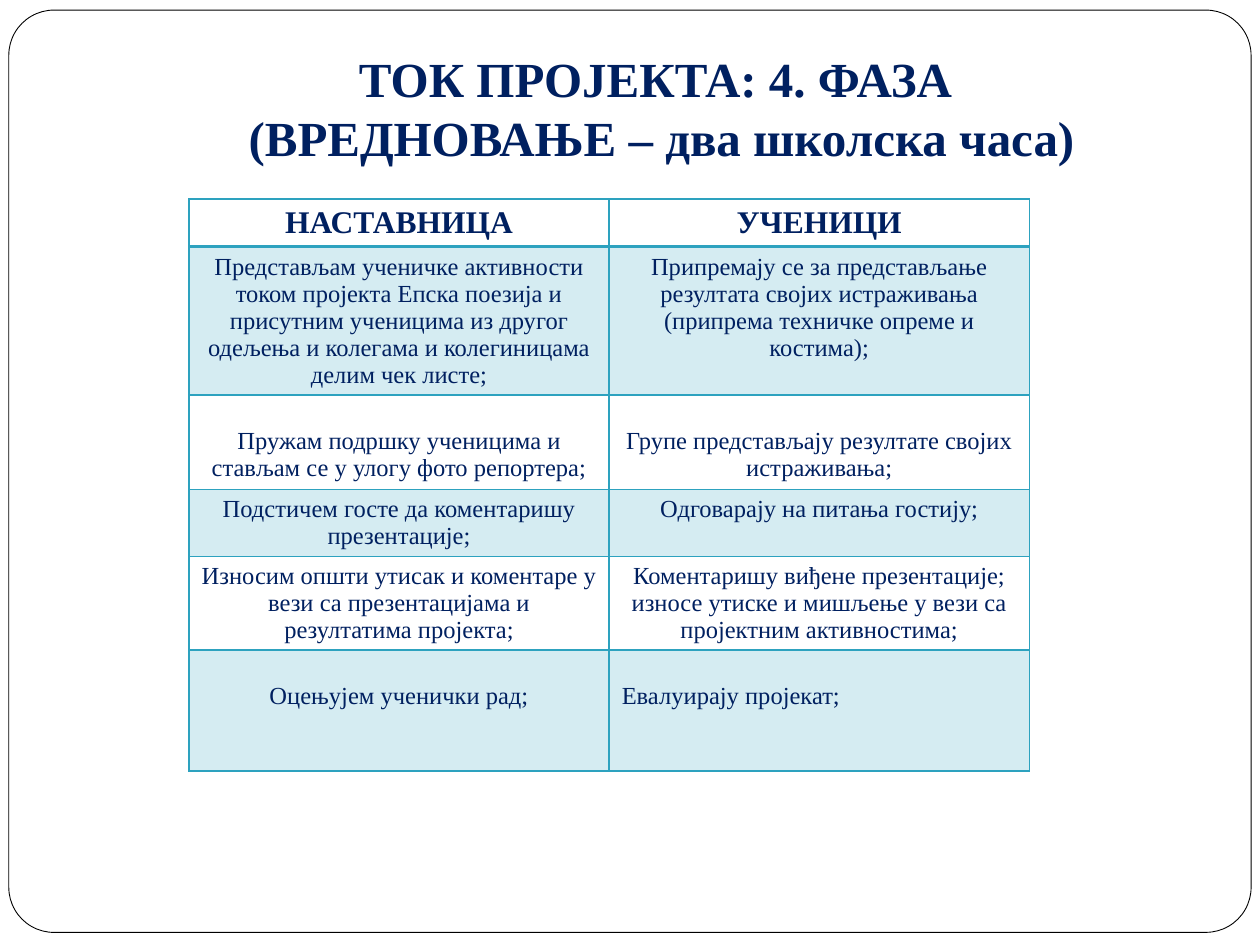
from lxml.etree import SubElement
from pptx import Presentation
from pptx.dml.color import RGBColor
from pptx.enum.shapes import MSO_SHAPE
from pptx.enum.text import MSO_ANCHOR, MSO_AUTO_SIZE, PP_ALIGN
from pptx.oxml.ns import qn
from pptx.util import Inches, Pt

NAVY, TEAL, WHITE, BLACK = "002060", "2DA2BF", "FFFFFF", "000000"
TITLE = "ТОК ПРОЈЕКТА: 4. ФАЗА \v(ВРЕДНОВАЊЕ – два школска часа)"
PHASE_ROWS = [
    ("НАСТАВНИЦА", "УЧЕНИЦИ"),
    ("Представљам ученичке активности током пројекта Епска поезија и присутним "
     "ученицима из другог одељења и колегама и колегиницама делим чек листе;",
     "Припремају се за представљање резултата својих истраживања "
     "(припрема техничке опреме и костима);"),
    ("Пружам подршку ученицима и стављам се у улогу фото репортера;",
     "Групе представљају резултате својих истраживања;"),
    ("Подстичем госте да коментаришу презентације;",
     "Одговарају на питања гостију;"),
    ("Износим општи утисак и коментаре у вези са презентацијама и резултатима пројекта;",
     "Коментаришу виђене презентације; износе утиске и мишљење у вези са "
     "пројектним активностима;"),
    ("Оцењујем ученички рад;", "Евалуирају пројекат;"),
]
ROW_HEIGHTS = [0.38, 1.17, 0.75, 0.53, 0.74, 0.96]
LOWERED_ROWS = (2, 5)
LEFT_ALIGNED = (5, 1)


def color(code):
    return RGBColor.from_string(code)


def write(frame, text, size=14, bold=False, align=PP_ALIGN.CENTER):
    frame.text = text
    paragraph = frame.paragraphs[0]
    paragraph.alignment = align
    for run in paragraph.runs:
        run.font.name = "Times New Roman"
        run.font.size = Pt(size)
        run.font.bold = bold
        run.font.color.rgb = color(NAVY)


def tint(cell, code, percent):
    cell.fill.solid()
    cell.fill.fore_color.rgb = color(code)
    shade = cell.fill._xPr.find(qn("a:solidFill"))[0]
    SubElement(shade, qn("a:alpha"), val=str(percent * 1000))


def add_borders(cell, code, widths):
    properties = cell._tc.get_or_add_tcPr()
    for position, (side, width) in enumerate(widths.items()):
        border = properties.makeelement(qn(f"a:ln{side}"), {"w": str(Pt(width))})
        solid = SubElement(border, qn("a:solidFill"))
        SubElement(solid, qn("a:srgbClr"), val=code)
        properties.insert(position, border)


def add_frame(slide):
    frame = slide.shapes.add_shape(
        MSO_SHAPE.ROUNDED_RECTANGLE, Inches(0.07), Inches(0.08), Inches(9.86), Inches(7.32))
    frame.adjustments[0] = 0.049
    frame.shadow.inherit = False
    frame.fill.solid()
    frame.fill.fore_color.rgb = color(WHITE)
    frame.line.color.rgb = color(BLACK)
    frame.line.width = Pt(0.5)
    slide.shapes._spTree.insert(2, frame._element)


def format_title(title):
    title.left, title.top = Inches(1), Inches(0.17)
    title.width, title.height = Inches(8.5), Inches(1.25)
    write(title.text_frame, TITLE, size=28, bold=True)
    title.text_frame.auto_size = MSO_AUTO_SIZE.NONE
    title.text_frame.vertical_anchor = MSO_ANCHOR.BOTTOM
    title.text_frame.margin_bottom = Inches(0.1)


def add_phase_table(slide):
    table = slide.shapes.add_table(
        len(PHASE_ROWS), 2, Inches(1.5), Inches(1.58),
        Inches(6.67), Inches(sum(ROW_HEIGHTS))).table
    table.first_row = table.horz_banding = False
    for row, (activities, height) in enumerate(zip(PHASE_ROWS, ROW_HEIGHTS)):
        table.rows[row].height = Inches(height)
        header = row == 0
        for column, activity in enumerate(activities):
            cell = table.cell(row, column)
            align = PP_ALIGN.LEFT if (row, column) == LEFT_ALIGNED else PP_ALIGN.CENTER
            write(cell.text_frame, activity, size=18 if header else 14,
                  bold=header, align=align)
            if row in LOWERED_ROWS:
                cell.margin_top = Inches(0.26)
            if row % 2:
                tint(cell, TEAL, 20)
            else:
                cell.fill.background()
            add_borders(cell, TEAL, {"L": 1, "R": 1, "T": 2 if row == 1 else 1,
                                     "B": 2 if header else 1})


def main():
    presentation = Presentation()
    presentation.slide_width, presentation.slide_height = Inches(10), Inches(7.5)
    slide = presentation.slides.add_slide(presentation.slide_layouts[5])
    add_frame(slide)
    format_title(slide.shapes.title)
    add_phase_table(slide)
    presentation.save("out.pptx")


if __name__ == "__main__":
    main()
